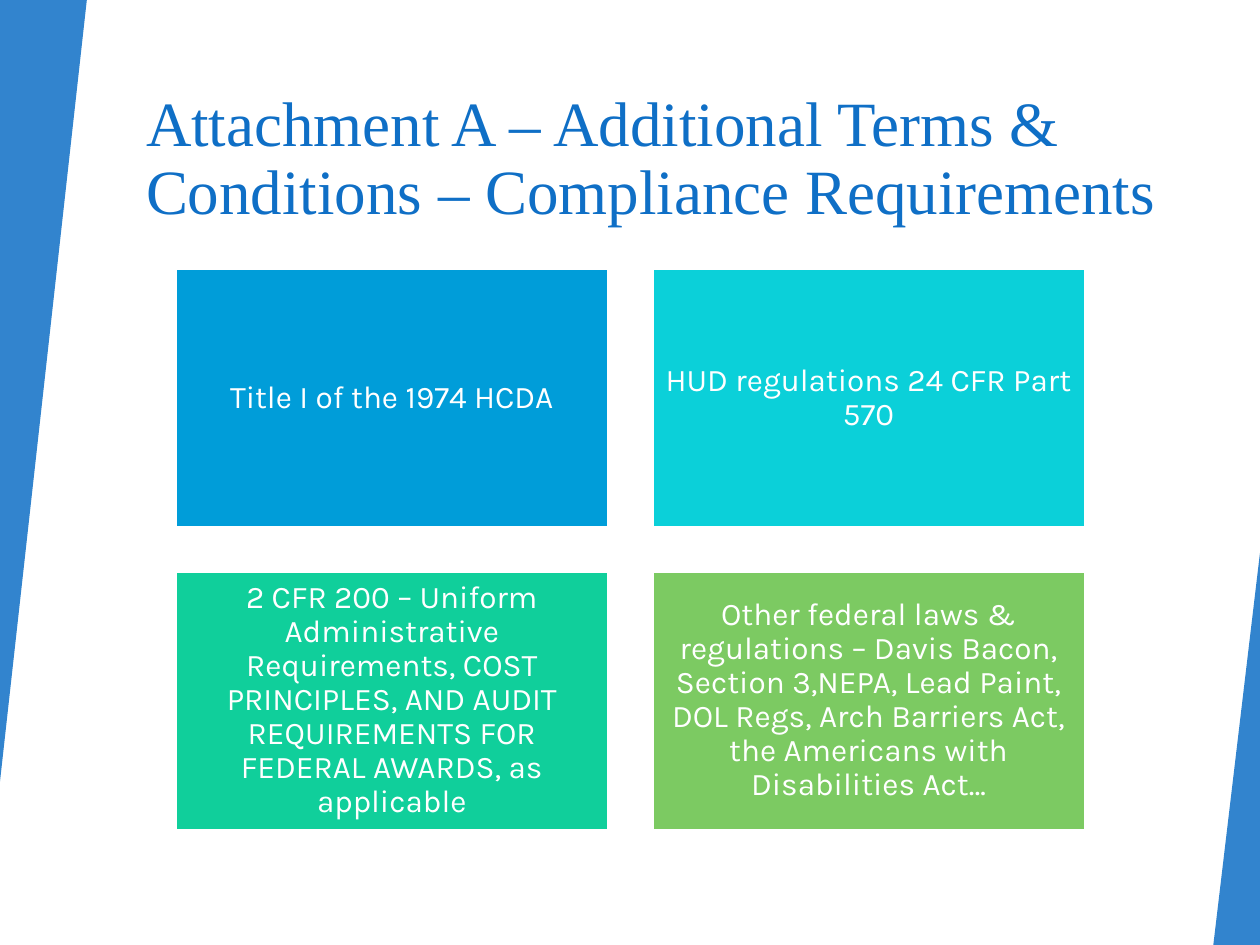
"""Build the compliance requirements slide with four coloured cards."""
from dataclasses import dataclass

from lxml.etree import SubElement
from pptx import Presentation
from pptx.dml.color import RGBColor
from pptx.enum.shapes import MSO_SHAPE
from pptx.enum.text import MSO_ANCHOR, PP_ALIGN
from pptx.oxml.ns import qn
from pptx.shapes.autoshape import Shape
from pptx.slide import Slide
from pptx.text.text import TextFrame
from pptx.util import Cm, Pt

WHITE = RGBColor(0xFF, 0xFF, 0xFF)
NAVY = RGBColor(0x0F, 0x6F, 0xC6)
BLUE = RGBColor(0x00, 0x9D, 0xD9)
CYAN = RGBColor(0x0B, 0xD0, 0xD9)
TEAL = RGBColor(0x10, 0xCF, 0x9B)
GREEN = RGBColor(0x7C, 0xCA, 0x62)

GRID_LEFT, GRID_TOP = 3.53, 5.41
CARD_WIDTH, CARD_HEIGHT = 8.74, 5.23
GRID_GAP = 0.87
COLUMNS = 2


@dataclass(frozen=True)
class Wedge:
    left: float
    top: float
    width: float
    height: float
    rotation: int


@dataclass(frozen=True)
class Card:
    text: str
    color: RGBColor


WEDGES = (
    Wedge(0, 0, 1.75, 15.75, 180),
    Wedge(24.46, 11.15, 0.94, 7.9, 0),
)
CARDS = (
    Card("Title I of the 1974 HCDA", BLUE),
    Card("HUD regulations 24 CFR Part 570", CYAN),
    Card("2 CFR 200 – Uniform Administrative Requirements, COST PRINCIPLES, "
         "AND AUDIT REQUIREMENTS FOR FEDERAL AWARDS, as applicable", TEAL),
    Card("Other federal laws & regulations – Davis Bacon, Section 3,NEPA, "
         "Lead Paint, DOL Regs, Arch Barriers Act, the Americans with "
         "Disabilities Act…", GREEN),
)


def write_text(frame: TextFrame, text: str, *, font: str, size: int,
               color: RGBColor, align: PP_ALIGN) -> None:
    frame.word_wrap = True
    frame.vertical_anchor = MSO_ANCHOR.MIDDLE
    para = frame.paragraphs[0]
    para.alignment = align
    para.line_spacing = 0.9
    span = para.add_run()
    span.text = text
    span.font.name = font
    span.font.size = Pt(size)
    span.font.color.rgb = color


def add_filled(page: Slide, kind: MSO_SHAPE, left: float, top: float,
               width: float, height: float, color: RGBColor) -> Shape:
    box = page.shapes.add_shape(kind, Cm(left), Cm(top), Cm(width), Cm(height))
    box.shadow.inherit = False
    box.fill.solid()
    box.fill.fore_color.rgb = color
    return box


def add_wedge(page: Slide, wedge: Wedge) -> None:
    box = add_filled(page, MSO_SHAPE.ISOSCELES_TRIANGLE, wedge.left, wedge.top,
                     wedge.width, wedge.height, NAVY)
    box.adjustments[0] = 1
    box.rotation = wedge.rotation
    box.line.fill.background()
    tint = box.fill._xPr.find(qn("a:solidFill"))[0]
    SubElement(tint, qn("a:alpha")).set("val", "85000")


def add_card(page: Slide, card: Card, index: int) -> None:
    row, column = divmod(index, COLUMNS)
    box = add_filled(page, MSO_SHAPE.RECTANGLE,
                     GRID_LEFT + column * (CARD_WIDTH + GRID_GAP),
                     GRID_TOP + row * (CARD_HEIGHT + GRID_GAP),
                     CARD_WIDTH, CARD_HEIGHT, card.color)
    box.line.color.rgb = WHITE
    box.line.width = Pt(2)
    frame = box.text_frame
    frame.margin_left = frame.margin_right = Cm(0.18)
    frame.margin_top = frame.margin_bottom = Cm(0.18)
    write_text(frame, card.text, font="Karla", size=18, color=WHITE,
               align=PP_ALIGN.CENTER)


def main() -> None:
    deck = Presentation()
    deck.slide_width, deck.slide_height = Cm(25.4), Cm(19.05)
    page = deck.slides.add_slide(deck.slide_layouts[5])
    title = page.shapes.title
    title.left, title.top = Cm(2.69), Cm(1.7)
    title.width, title.height = Cm(21.23), Cm(3.05)
    write_text(title.text_frame,
               "Attachment A – Additional Terms & Conditions – "
               "Compliance Requirements",
               font="Times New Roman", size=36, color=NAVY,
               align=PP_ALIGN.LEFT)
    for wedge in WEDGES:
        add_wedge(page, wedge)
    for index, card in enumerate(CARDS):
        add_card(page, card, index)
    deck.save("out.pptx")


if __name__ == "__main__":
    main()
